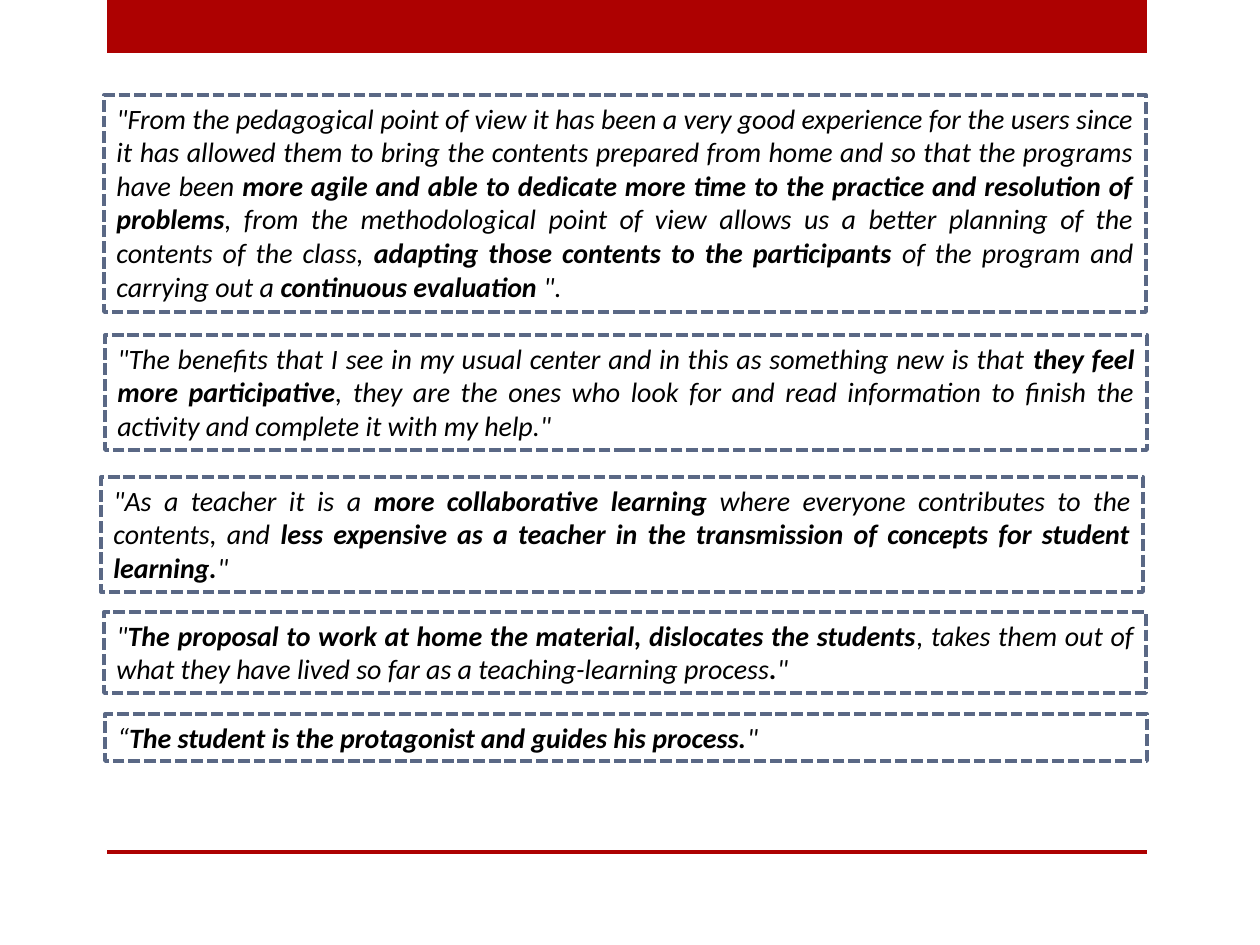
import pptx
import pptx.util
import pptx.dml.color
import pptx.enum.dml
import pptx.enum.shapes
import pptx.enum.text

SCALE = 914400 / 126  # EMU per px
COLORS = {"red": "AD0101", "edge": "5A6885", "ink": "000000"}
FONT = {"name": "Calibri", "size": pptx.util.Pt(16), "italic": True}
FRAME = {
    "word_wrap": True,
    "auto_size": pptx.enum.text.MSO_AUTO_SIZE.SHAPE_TO_FIT_TEXT,
    "vertical_anchor": pptx.enum.text.MSO_ANCHOR.TOP,
}
EDGE = {
    "width": pptx.util.Pt(2.25),
    "dash_style": pptx.enum.dml.MSO_LINE.SQUARE_DOT,
}
WIDTH = 1042

# Left, top, height and wording; stars enclose the bold parts
QUOTES = [
    (104, 95, 217,
     "\"From the pedagogical point of view it has been a very good experience "
     "for the users since it has allowed them to bring the contents prepared "
     "from home and so that the programs have been *more agile and able to "
     "dedicate more time to the practice and resolution of problems*, from the "
     "methodological point of view allows us a better planning of the contents "
     "of the class, *adapting those contents to the participants* of the program "
     "and carrying out a *continuous evaluation *\"."),
    (105, 335, 115,
     "\"The benefits that I see in my usual center and in this as something new "
     "is that *they feel more participative*, they are the ones who look for and "
     "read information to finish the activity and complete it with my help.\""),
    (101, 477, 115,
     "\"As a teacher it is a *more collaborative learning *where everyone "
     "contributes to the contents, and *less expensive as a teacher in the "
     "transmission of concepts for student learning.*\""),
    (104, 612, 81,
     "\"*The proposal to work at home the material, dislocates the students*, "
     "takes them out of what they have lived so far as a teaching-learning "
     "process*.*\""),
    (105, 714, 47,
     "“*The student is the protagonist and guides his process.*\""),
]


def px(num):
    return pptx.util.Emu(round(num * SCALE))


def color(key):
    return pptx.dml.color.RGBColor.from_string(COLORS[key])


def style(item, values):
    for name, value in values.items():
        setattr(item, name, value)


def add_rect(slide, *box):
    kind = pptx.enum.shapes.MSO_SHAPE.RECTANGLE
    rect = slide.shapes.add_shape(kind, *map(px, box))
    rect.shadow.inherit = False
    return rect


def add_bar(slide, top, high):
    bar = add_rect(slide, 107, top, 1040, high)
    bar.fill.solid()
    bar.fill.fore_color.rgb = color("red")
    bar.line.fill.background()


def add_quote(slide, left, top, high, text):
    box = add_rect(slide, left, top, WIDTH, high)
    box.fill.background()
    box.line.color.rgb = color("edge")
    style(box.line, EDGE)
    style(box.text_frame, FRAME)
    para = box.text_frame.paragraphs[0]
    para.alignment = pptx.enum.text.PP_ALIGN.JUSTIFY
    # Plain and bold parts take turns
    for i, part in enumerate(text.split("*")):
        run = para.add_run()
        run.text = part
        style(run.font, {**FONT, "bold": i % 2 == 1})
        run.font.color.rgb = color("ink")


def main():
    deck = pptx.Presentation()
    deck.slide_width, deck.slide_height = px(1260), px(945)
    slide = deck.slides.add_slide(deck.slide_layouts[6])
    # Top band and footer rule
    add_bar(slide, 0, 53)
    add_bar(slide, 850, 4)
    # Teachers' quotes
    for quote in QUOTES:
        add_quote(slide, *quote)
    deck.save("out.pptx")


if __name__ == "__main__":
    main()
